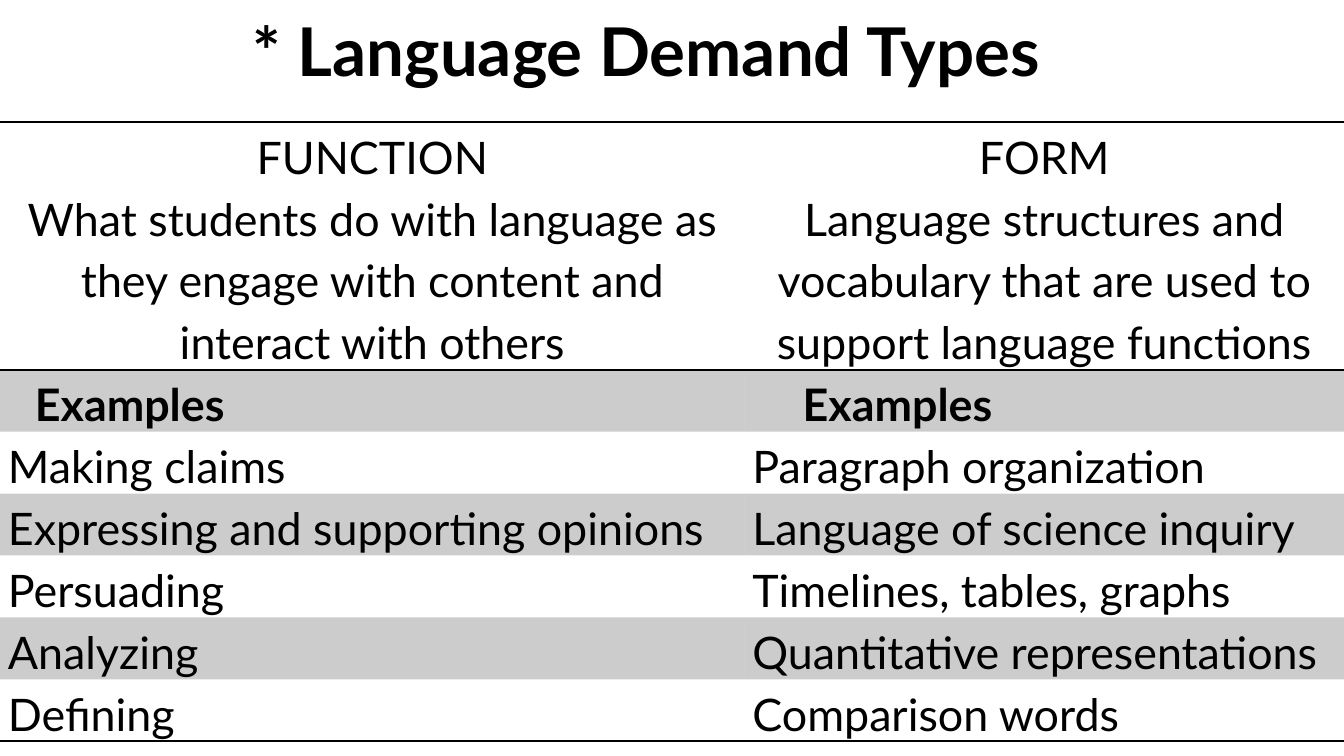
from lxml.etree import SubElement
from pptx import Presentation
from pptx.dml.color import RGBColor
from pptx.enum.text import MSO_ANCHOR as Anchor, PP_ALIGN as Align
from pptx.oxml import parse_xml
from pptx.oxml.ns import nsdecls, qn
from pptx.util import Cm, Pt

BLACK = RGBColor(0x00, 0x00, 0x00)
FONT = "Lato"
NO_STYLE = "{2D5ABB26-0587-4C30-8999-92F81FD0307C}"
SHADE_ALPHA = 20000
SIDE_MARGIN = 0.15

DEFINITIONS = [
    ("FUNCTION", "What students do with language as they engage with content and interact with others"),
    ("FORM", "Language structures and vocabulary that are used to support language functions"),
]
EXAMPLES = [
    ("Making claims", "Paragraph organization"),
    ("Expressing and supporting opinions", "Language of science inquiry"),
    ("Persuading", "Timelines, tables, graphs"),
    ("Analyzing", "Quantitative representations"),
    ("Defining", "Comparison words"),
]
EXAMPLES_INDENTS = (0.66, 1.1)


def style_paragraph(paragraph, size, bold=False, align=Align.LEFT):
    paragraph.alignment = align
    font = paragraph.font
    font.name, font.size, font.bold = FONT, Pt(size), bold
    font.color.rgb = BLACK


def add_title(slide, left, top, width, height):
    title = slide.shapes.add_textbox(Cm(left), Cm(top), Cm(width), Cm(height))
    frame = title.text_frame
    frame.word_wrap = True
    frame.vertical_anchor = Anchor.MIDDLE
    frame.text = "* Language Demand Types"
    style_paragraph(frame.paragraphs[0], 36, True, Align.CENTER)


def shade(cell):
    cell.fill.solid()
    cell.fill.fore_color.rgb = BLACK
    colour = cell._tc.tcPr.find(f"{qn('a:solidFill')}/{qn('a:srgbClr')}")
    SubElement(colour, qn("a:alpha"), val=str(SHADE_ALPHA))


def add_rules(cell, edges):
    for position, edge in enumerate(edges):
        rule = parse_xml(
            f'<a:{edge} {nsdecls("a")} w="{Pt(1)}"><a:solidFill>'
            f'<a:srgbClr val="{BLACK}"/></a:solidFill></a:{edge}>'
        )
        cell._tc.tcPr.insert(position, rule)


def fill_cell(cell, lines, indent=SIDE_MARGIN, bold=False, align=Align.LEFT, shaded=False):
    cell.margin_left, cell.margin_right = Cm(indent), Cm(SIDE_MARGIN)
    cell.margin_top = cell.margin_bottom = 0
    cell.text = "\n".join(lines)
    for paragraph in cell.text_frame.paragraphs:
        style_paragraph(paragraph, 24, bold, align)
        paragraph.line_spacing = 1.15
    if shaded:
        shade(cell)
    else:
        cell.fill.background()


def add_demand_table(slide, left, top, width, height):
    row_count = len(EXAMPLES) + 2
    frame = slide.shapes.add_table(row_count, 2, Cm(left), Cm(top), Cm(width), Cm(height))
    table = frame.table
    table.first_row = table.horz_banding = False
    table._tbl.tblPr.find(qn("a:tableStyleId")).text = NO_STYLE

    function_width = 14.07
    table.columns[0].width = Cm(function_width)
    table.columns[1].width = Cm(width - function_width)
    row_height = height / (row_count + 3)
    for index, row in enumerate(table.rows):
        row.height = Cm(row_height * (4 if index == 0 else 1))

    for column, definition in enumerate(DEFINITIONS):
        heading = table.cell(0, column)
        fill_cell(heading, definition, align=Align.CENTER)
        add_rules(heading, ("lnT", "lnB"))
        fill_cell(table.cell(1, column), ["Examples"], EXAMPLES_INDENTS[column], True, shaded=True)
        for row, examples in enumerate(EXAMPLES, start=2):
            fill_cell(table.cell(row, column), [examples[column]], shaded=row % 2 == 1)
        add_rules(table.cell(row_count - 1, column), ("lnB",))


def main():
    deck = Presentation()
    deck.slide_width, deck.slide_height = Cm(25.4), Cm(14.29)
    slide = deck.slides.add_slide(deck.slide_layouts[6])
    add_title(slide, 0.79, -0.25, 22.86, 2.39)
    add_demand_table(slide, 0, 2.31, 25.4, 11.7)
    deck.save("out.pptx")


if __name__ == "__main__":
    main()
